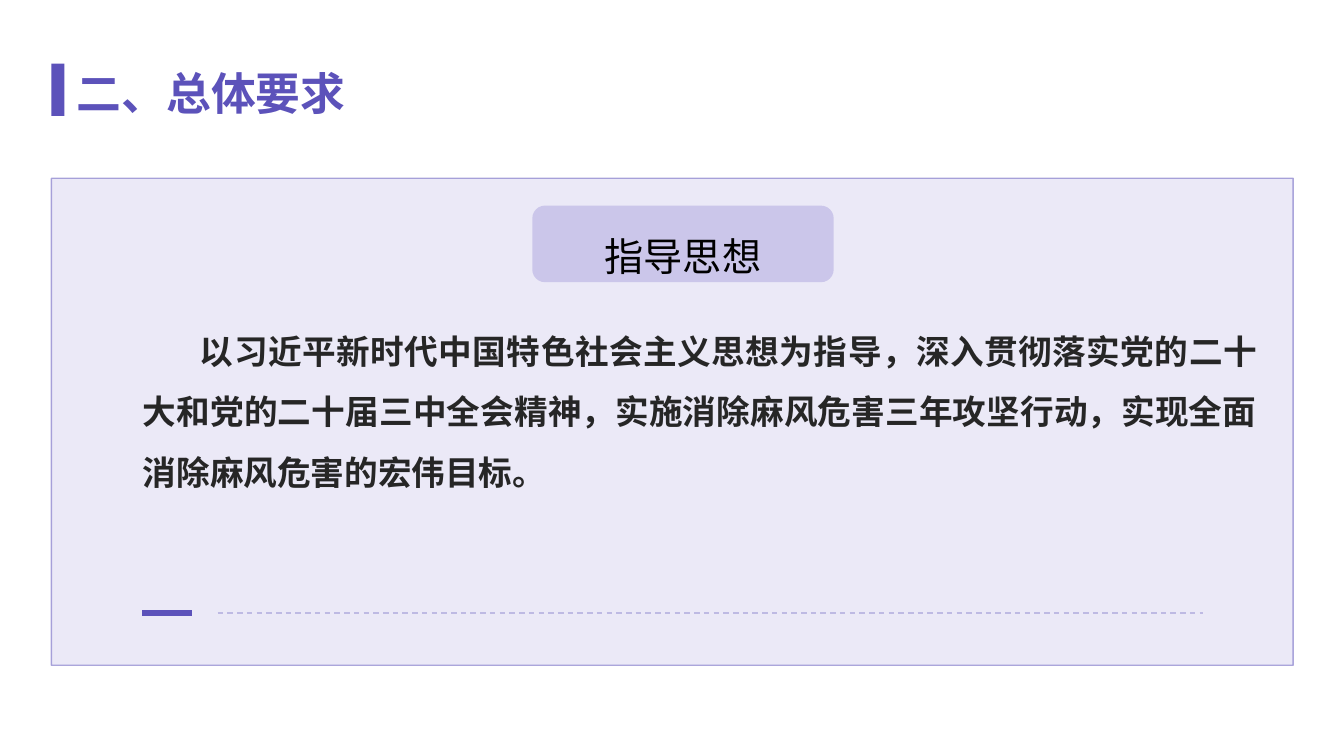
"""Builds the guiding-principles slide of the general requirements section."""
from dataclasses import dataclass

from lxml.etree import SubElement
from pptx import Presentation
from pptx.dml.color import RGBColor
from pptx.enum.dml import MSO_LINE
from pptx.enum.shapes import MSO_CONNECTOR, MSO_SHAPE
from pptx.enum.text import MSO_ANCHOR, PP_ALIGN
from pptx.oxml.ns import qn
from pptx.util import Pt

TITLE = "二、总体要求"
LABEL = "指导思想"
BODY = (
    "以习近平新时代中国特色社会主义思想为指导，深入贯彻落实党的二十大和党的二十届三中全会精神，"
    "实施消除麻风危害三年攻坚行动，实现全面消除麻风危害的宏伟目标。"
)


@dataclass(frozen=True)
class Theme:
    """Colours, fonts and type sizes."""

    accent: str = "5C52BA"
    panel: str = "EBE9F7"
    badge: str = "CBC6EA"
    dash: str = "BEBAE3"
    ink: str = "262626"
    black: str = "000000"
    latin: str = "Arial"
    chinese: str = "Noto Sans CJK SC"
    title_size: int = 32
    label_size: int = 28
    body_size: int = 24


THEME = Theme()
PAGE_SIZE = (960, 540)
LEFT = 36.7
PANEL = (LEFT, 127.4, 887, 347.8)
BODY_BOX = (95, 146.9, 810, 279.4)
BADGE = (380.2, 146.9, 215.3, 54.7)
TITLE_BOX = (54.7, 28.1, 850.3, 56.9)
TITLE_BAR = (LEFT, 45.4, 9.4, 37.4)
RULE_TOP = 437.8
FIRST_LINE_INDENT = 40.7


def colour(code):
    return RGBColor.from_string(code)


def add_block(page, kind, bounds, fill):
    block = page.shapes.add_shape(kind, *map(Pt, bounds))
    block.shadow.inherit = False
    block.fill.solid()
    block.fill.fore_color.rgb = colour(fill)
    block.line.fill.background()
    return block


def add_rule(page, start, end, ink, weight, dash=None):
    rule = page.shapes.add_connector(
        MSO_CONNECTOR.STRAIGHT, Pt(start), Pt(RULE_TOP), Pt(end), Pt(RULE_TOP)
    )
    rule.line.color.rgb = colour(ink)
    rule.line.width = Pt(weight)
    if dash:
        rule.line.dash_style = dash
    SubElement(rule._element.spPr, qn("a:effectLst"))


def write(box, text, size, ink, font, align, anchor, bold=False, spacing=1.0):
    frame = box.text_frame
    frame.word_wrap = True
    frame.vertical_anchor = anchor
    para = frame.paragraphs[0]
    para.alignment = align
    para.line_spacing = spacing
    span = para.add_run()
    span.text = text
    span.font.size = Pt(size)
    span.font.bold = bold
    span.font.name = font
    span.font.color.rgb = colour(ink)
    SubElement(span.font._element, qn("a:ea"), typeface=THEME.chinese)
    return para


def add_panel(page):
    panel = add_block(page, MSO_SHAPE.RECTANGLE, PANEL, THEME.panel)
    panel.line.color.rgb = colour(THEME.accent)
    panel.line.width = Pt(1)
    border_colour = panel.line._ln.find(".//" + qn("a:srgbClr"))
    SubElement(border_colour, qn("a:alpha"), val="50000")

    body = add_block(page, MSO_SHAPE.RECTANGLE, BODY_BOX, THEME.panel)
    para = write(body, BODY, THEME.body_size, THEME.ink, THEME.chinese,
                 PP_ALIGN.JUSTIFY, MSO_ANCHOR.MIDDLE, bold=True, spacing=1.5)
    para._p.get_or_add_pPr().set("indent", str(Pt(FIRST_LINE_INDENT)))

    badge = add_block(page, MSO_SHAPE.FLOWCHART_ALTERNATE_PROCESS, BADGE, THEME.badge)
    write(badge, LABEL, THEME.label_size, THEME.black, THEME.chinese,
          PP_ALIGN.CENTER, MSO_ANCHOR.MIDDLE, spacing=1.5)


def add_title(page):
    box = page.shapes.add_textbox(*map(Pt, TITLE_BOX))
    frame = box.text_frame
    frame.margin_left = frame.margin_right = frame.margin_top = frame.margin_bottom = 0
    write(box, TITLE, THEME.title_size, THEME.accent, THEME.latin,
          PP_ALIGN.LEFT, MSO_ANCHOR.BOTTOM, bold=True)
    add_block(page, MSO_SHAPE.RECTANGLE, TITLE_BAR, THEME.accent)


def main():
    deck = Presentation()
    deck.slide_width, deck.slide_height = map(Pt, PAGE_SIZE)
    page = deck.slides.add_slide(deck.slide_layouts[6])
    add_panel(page)
    add_title(page)
    add_rule(page, 101.5, 136.8, THEME.accent, 4)
    add_rule(page, 155.5, 859, THEME.dash, 1, MSO_LINE.DASH)
    deck.save("out.pptx")


if __name__ == "__main__":
    main()
